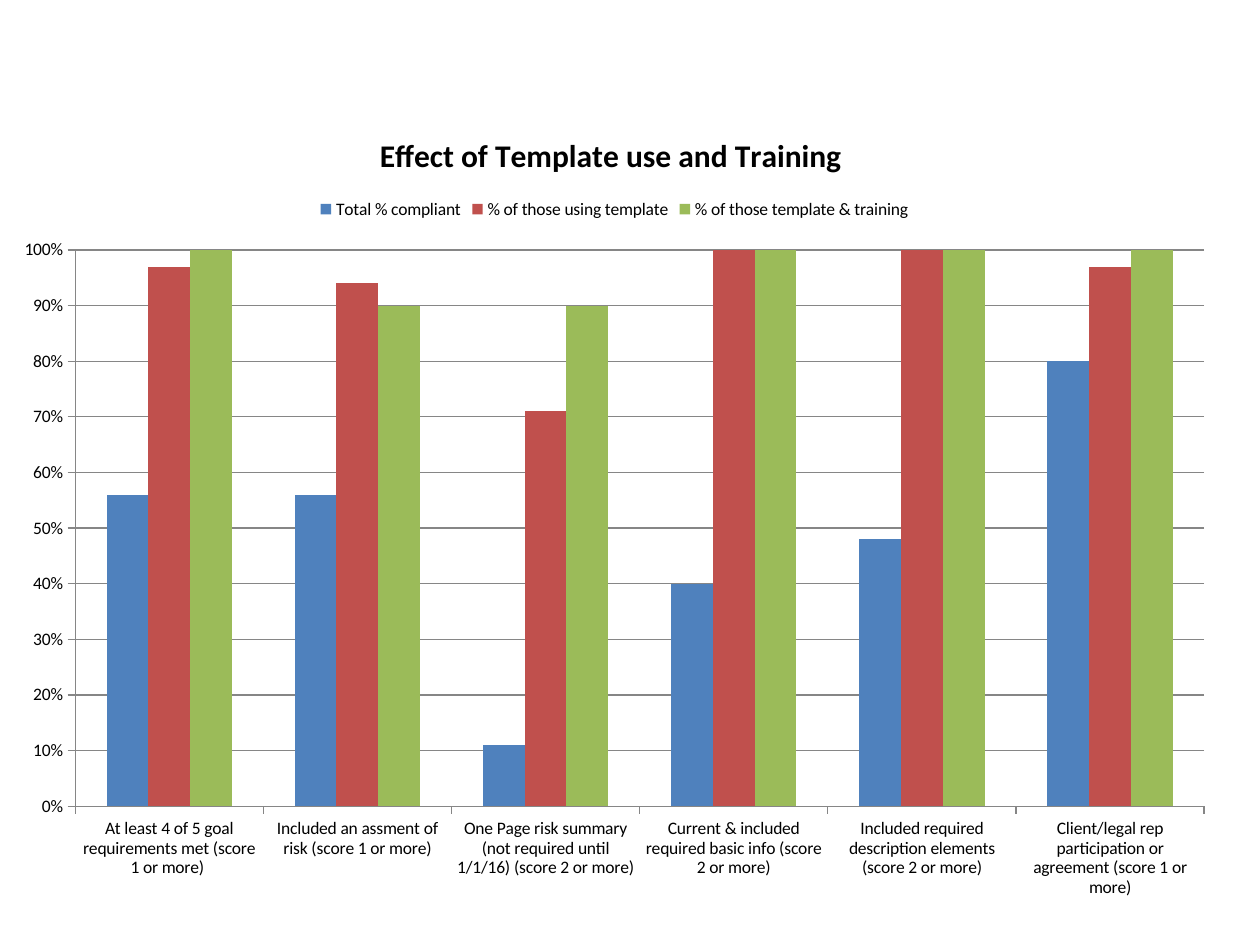
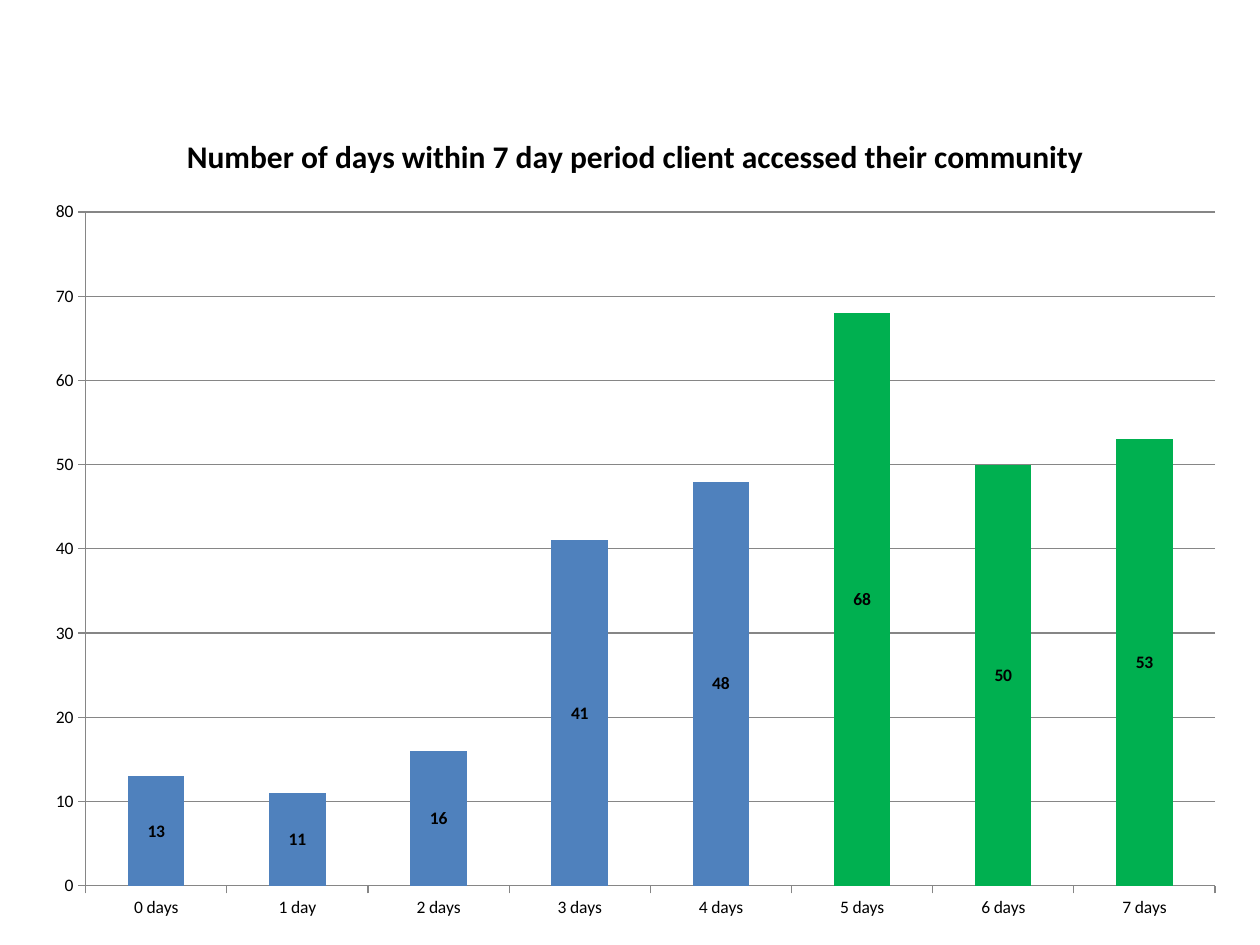
from pptx import Presentation
from pptx.chart.data import CategoryChartData
from pptx.dml.color import RGBColor
from pptx.enum.chart import (XL_CHART_TYPE, XL_LABEL_POSITION,
                             XL_LEGEND_POSITION, XL_TICK_MARK)
from pptx.util import Cm, Pt

FACE = "Calibri"
BLACK, GREY = "000000", "868686"
BLUE, RED, OLIVE, GREEN = "4F81BD", "C0504D", "9BBB59", "00B050"


def color(code):
    return RGBColor.from_string(code)


def write(frame, text, size=18, bold=True, ink=BLACK):
    frame.text = text
    font = frame.paragraphs[0].runs[0].font
    font.name, font.size, font.bold = FACE, Pt(size), bold
    font.color.rgb = color(ink)


charts = [
    dict(
        title="Effect of Template use and Training ",
        box=(0, 2.12, 24.77, 16.3),
        cats=["At least 4 of 5 goal requirements met (score 1 or more) ",
              "Included an assment of risk (score 1 or more)",
              "One Page risk summary (not required until 1/1/16) (score 2 or more)",
              "Current & included required basic info (score 2 or more)",
              "Included required description elements (score 2 or more)",
              "Client/legal rep participation or agreement (score 1 or more)"],
        series=[
            ("Total % compliant", BLUE, [0.56, 0.56, 0.11, 0.4, 0.48, 0.8]),
            ("% of those using template", RED, [0.97, 0.94, 0.71, 1, 1, 0.97]),
            ("% of those template & training", OLIVE, [1, 0.9, 0.9, 1, 1, 1]),
        ],
        top=1, step=0.1, form="0%", legend=True, labels=False, marked=[]),
    dict(
        title="Number of days within 7 day period client accessed their community",
        box=(0.64, 2.12, 24.34, 16.72),
        cats=[f"{n} day" if n == 1 else f"{n} days" for n in range(8)],
        series=[("Series 1", BLUE, [13, 11, 16, 41, 48, 68, 50, 53])],
        top=80, step=10, form="General", legend=False, labels=True,
        marked=[5, 6, 7]),
]

deck = Presentation()
deck.slide_width, deck.slide_height = Cm(25.4), Cm(19.05)

for item in charts:
    slide = deck.slides.add_slide(deck.slide_layouts[6])
    data = CategoryChartData(number_format=item["form"])
    data.categories = item["cats"]
    for name, _, vals in item["series"]:
        data.add_series(name, vals)
    chart = slide.shapes.add_chart(XL_CHART_TYPE.COLUMN_CLUSTERED,
                                   *map(Cm, item["box"]), data).chart

    chart.font.name, chart.font.size = FACE, Pt(10)
    chart.font.color.rgb = color(BLACK)
    chart.has_title = True
    write(chart.chart_title.text_frame, item["title"])
    chart.chart_title.include_in_layout = False

    chart.has_legend = item["legend"]
    if item["legend"]:
        chart.legend.position = XL_LEGEND_POSITION.TOP
        chart.legend.include_in_layout = False

    scale = chart.value_axis
    scale.minimum_scale, scale.maximum_scale = 0, item["top"]
    scale.major_unit = item["step"]
    scale.has_major_gridlines = True
    scale.tick_labels.number_format = item["form"]
    scale.tick_labels.number_format_is_linked = False
    for axis in (scale, chart.category_axis):
        axis.major_tick_mark = XL_TICK_MARK.OUTSIDE
        axis.minor_tick_mark = XL_TICK_MARK.NONE
    for part in (scale, chart.category_axis, scale.major_gridlines):
        part.format.line.color.rgb = color(GREY)
        part.format.line.width = Pt(0.75)

    plot = chart.plots[0]
    plot.gap_width, plot.overlap = 150, 0
    plot.vary_by_categories = False
    for bars, (_, fill, _) in zip(plot.series, item["series"]):
        bars.format.fill.solid()
        bars.format.fill.fore_color.rgb = color(fill)
        bars.invert_if_negative = False
        for n in item["marked"]:
            mark = bars.points[n].format.fill
            mark.solid()
            mark.fore_color.rgb = color(GREEN)
        if item["labels"]:
            labels = bars.data_labels
            labels.show_value = True
            labels.position = XL_LABEL_POSITION.CENTER
            labels.font.name, labels.font.size = FACE, Pt(10)
            labels.font.bold = True
            labels.font.color.rgb = color(BLACK)

deck.save("out.pptx")
